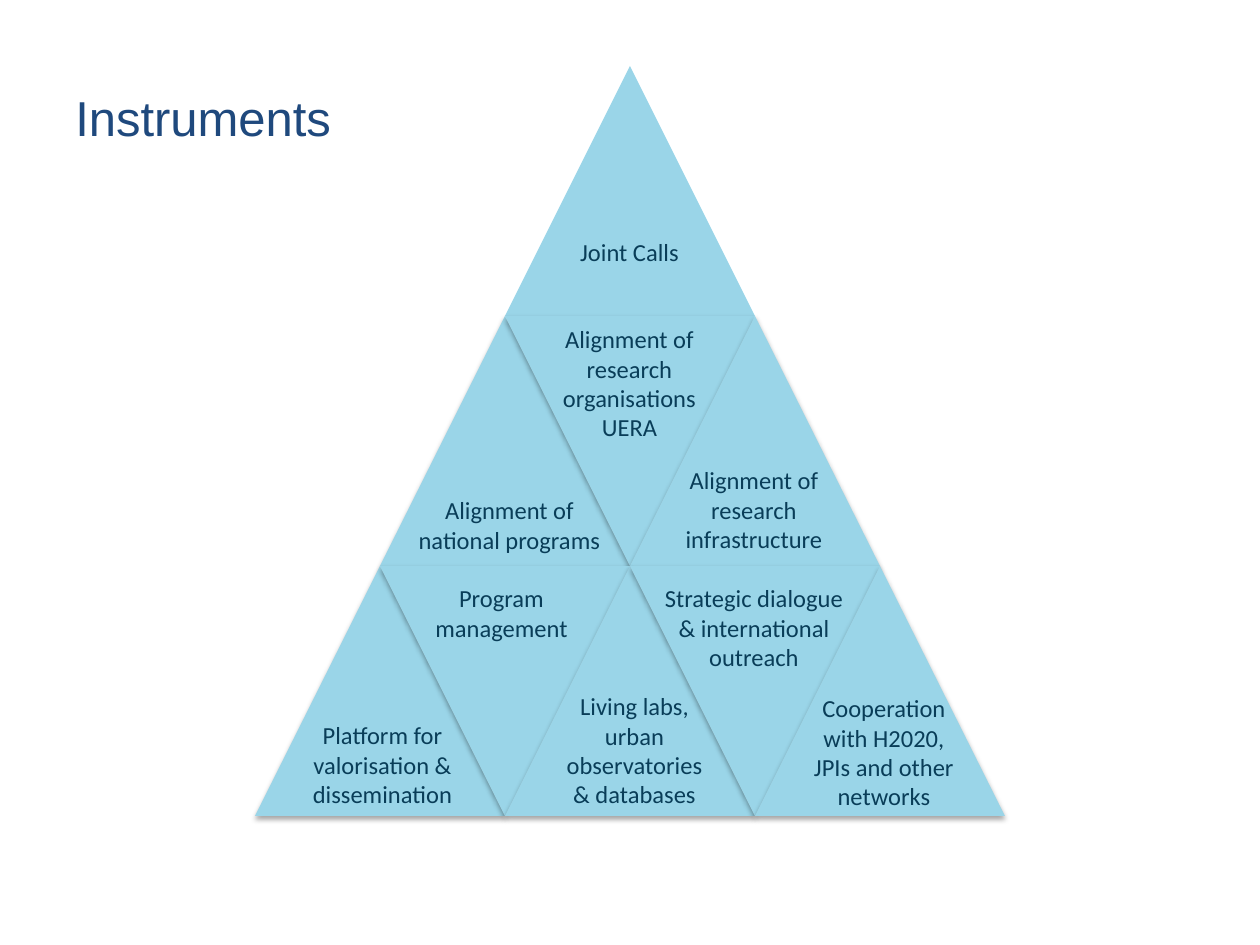
from lxml.etree import SubElement
from pptx import Presentation
from pptx.dml.color import RGBColor
from pptx.enum.shapes import MSO_SHAPE
from pptx.enum.text import MSO_ANCHOR, PP_ALIGN
from pptx.oxml.ns import qn
from pptx.util import Emu, Pt

PX_PER_INCH = 126
SIDE = 250  # width and height of one triangle
ROWS = 3
TRIANGLE_FILL = "9AD5E8"
LABEL_COLOR = "093D58"
TITLE_COLOR = "1F497D"

# Labels: box within the pyramid, then paragraphs ("\n" is a line break)
LABELS = [
    ((42, 648, 171, 102), ["Platform for valorisation & dissemination"]),
    ((294, 619, 171, 131), ["Living labs, urban observatories & databases"]),
    ((516, 621, 226, 131), ["Cooperation\nwith H2020,", "JPIs and other networks"]),
    ((386, 511, 226, 102), ["Strategic dialogue", "& international outreach"]),
    ((152, 511, 189, 72), ["Program management"]),
    ((386, 393, 226, 102), ["Alignment of", "research\ninfrastructure"]),
    ((127, 423, 255, 72), ["Alignment of\nnational programs"]),
    ((236, 252, 277, 131), ["Alignment of\nresearch\norganisations\nUERA"]),
]


def px(length):
    return Emu(round(length * 914400 / PX_PER_INCH))


def color(hex_string):
    return RGBColor.from_string(hex_string)


def add_text(page, box, paragraphs, font, size, hex_color,
             align=PP_ALIGN.CENTER, anchor=MSO_ANCHOR.TOP):
    text_box = page.shapes.add_textbox(*(px(length) for length in box))
    frame = text_box.text_frame
    frame.word_wrap = True
    frame.vertical_anchor = anchor
    for index, text in enumerate(paragraphs):
        para = frame.add_paragraph() if index else frame.paragraphs[0]
        para.alignment = align
        for line_number, line in enumerate(text.split("\n")):
            if line_number:
                para.add_line_break()
            span = para.add_run()
            span.text = line
            span.font.name = font
            span.font.size = Pt(size)
            span.font.color.rgb = color(hex_color)
    return frame


def add_shadow(shape):
    effects = shape._element.spPr.find(qn("a:effectLst"))
    shadow = SubElement(effects, qn("a:outerShdw"), blurRad=str(Pt(3.1)),
                        dist=str(Pt(1.8)), dir="5400000", rotWithShape="0")
    black = SubElement(shadow, qn("a:srgbClr"), val="000000")
    SubElement(black, qn("a:alpha"), val="35000")


def add_triangle(page, left, top, inverted, shadowed):
    shape = page.shapes.add_shape(MSO_SHAPE.ISOSCELES_TRIANGLE,
                                  px(left), px(top), px(SIDE), px(SIDE))
    shape.rotation = 180 if inverted else 0
    shape.fill.solid()
    shape.fill.fore_color.rgb = color(TRIANGLE_FILL)
    shape.line.fill.background()
    shape.shadow.inherit = False
    if shadowed:
        add_shadow(shape)


def add_title(page, box):
    add_text(page, box, ["Instruments"], "Arial", 28, TITLE_COLOR,
             PP_ALIGN.LEFT, MSO_ANCHOR.MIDDLE)


def add_pyramid(page, left, top):
    # Each row has two more triangles than the one above, every second inverted
    for row in range(ROWS):
        row_left = left + (ROWS - 1 - row) * SIDE / 2
        for column in range(2 * row + 1):
            add_triangle(page, row_left + column * SIDE / 2, top + row * SIDE,
                         inverted=column % 2 == 1, shadowed=row > 0)

    # Label of the top triangle, centred in its lower half
    peak_box = (left + 312, top + 125, 125, 125)
    peak = add_text(page, peak_box, ["Joint Calls"], "Calibri", 14,
                    LABEL_COLOR, anchor=MSO_ANCHOR.MIDDLE)
    peak.margin_left = peak.margin_right = px(7)
    peak.margin_top = peak.margin_bottom = px(7)
    peak.paragraphs[0].line_spacing = 0.9

    # Labels of the other triangles
    for (x, y, width, height), paragraphs in LABELS:
        add_text(page, (left + x, top + y, width, height), paragraphs,
                 "Calibri", 14, LABEL_COLOR)


def main():
    deck = Presentation()
    deck.slide_width, deck.slide_height = px(1260), px(945)
    page = deck.slides.add_slide(deck.slide_layouts[6])
    add_title(page, (63, 38, 1134, 158))
    add_pyramid(page, 255, 66)
    deck.save("out.pptx")


if __name__ == "__main__":
    main()
